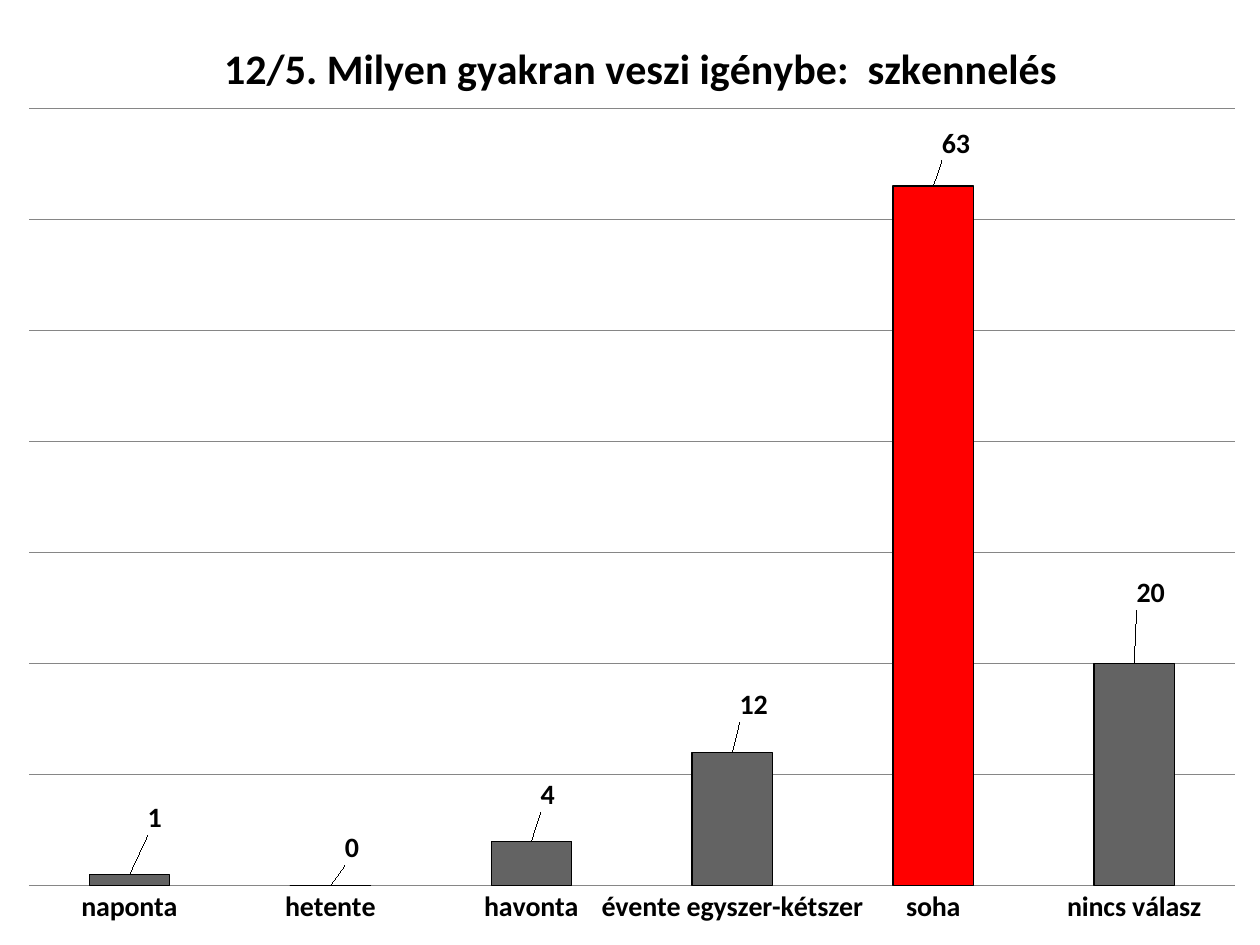
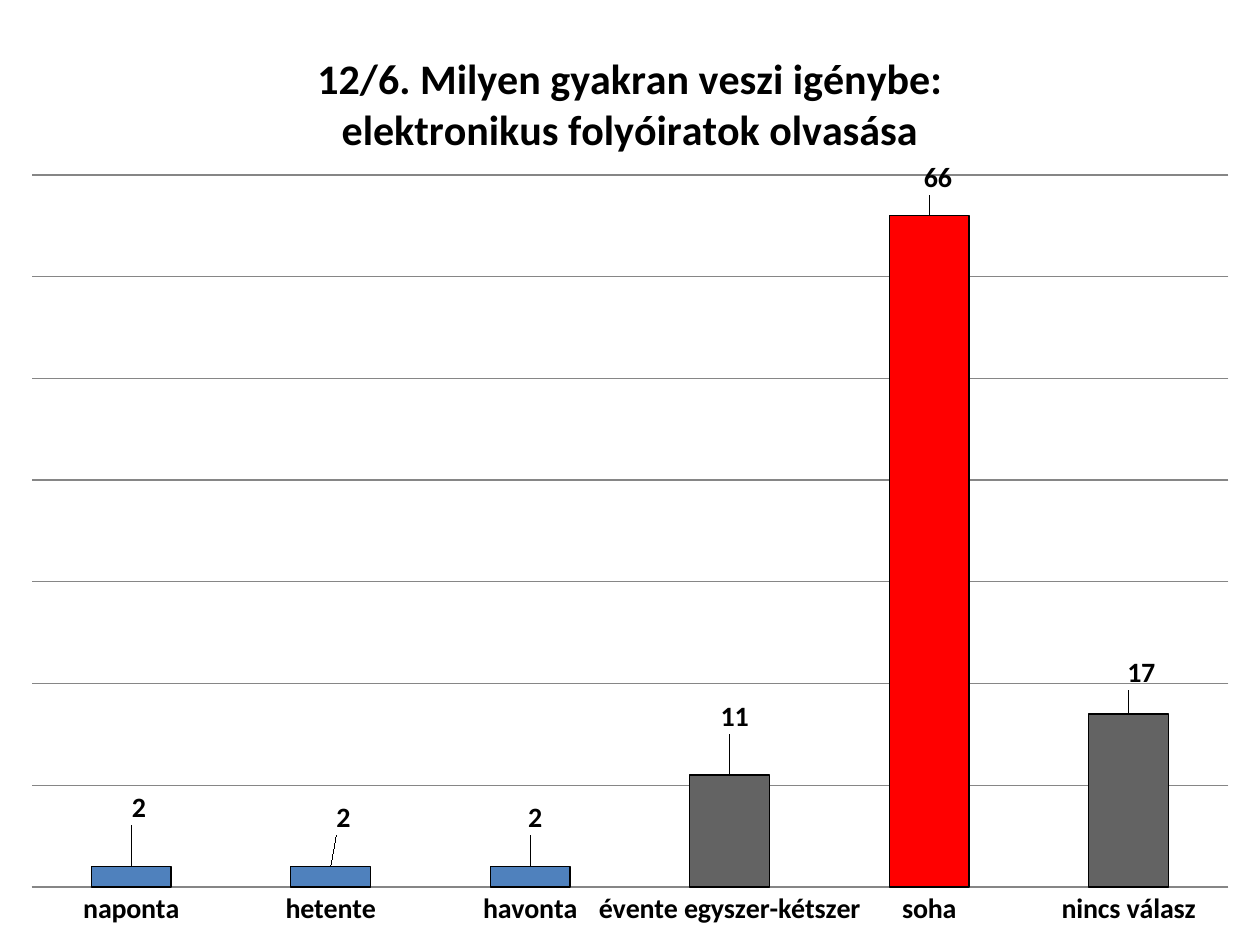
from lxml import etree
from pptx import Presentation
from pptx.chart.data import CategoryChartData
from pptx.dml.color import RGBColor
from pptx.enum.chart import XL_CHART_TYPE, XL_LABEL_POSITION, XL_TICK_LABEL_POSITION, XL_TICK_MARK
from pptx.oxml.ns import qn
from pptx.util import Inches, Pt

COLUMNS = XL_CHART_TYPE.COLUMN_CLUSTERED
ABOVE_BAR = XL_LABEL_POSITION.OUTSIDE_END
NO_TICK = XL_TICK_MARK.NONE
NO_LABELS = XL_TICK_LABEL_POSITION.NONE
FONT = "Calibri"
BLACK, GRID, GRAY, BLUE, RED = "000000", "868686", "636363", "4F81BD", "FF0000"
color = RGBColor.from_string

ANSWERS = ["naponta", "hetente", "havonta", "évente egyszer-kétszer", "soha", "nincs válasz"]
QUESTIONS = [
    {
        "title": "12/5. Milyen gyakran veszi igénybe:  szkennelés",
        "title_at": (1.72, 0.26),
        "frame": (0.03, 0, 9.97, 7.5),
        "plot": (0.23, 0.86, 9.57, 6.17),
        "counts": [1, 0, 4, 12, 63, 20],
        "fills": [GRAY, BLUE, GRAY, GRAY, RED, GRAY],
        "label_shifts": [(0.2, -0.27), (0.17, -0.12), (0.13, -0.19),
                         (0.17, -0.2), (0.18, -0.16), (0.13, -0.38)],
    },
    {
        "title": "12/6. Milyen gyakran veszi igénybe:\nelektronikus folyóiratok olvasása",
        "title_at": (2.49, 0.39),
        "frame": (0.06, 0.13, 9.88, 7.37),
        "plot": (0.25, 1.39, 9.5, 5.65),
        "counts": [2, 2, 2, 11, 66, 17],
        "fills": [BLUE, BLUE, BLUE, GRAY, RED, GRAY],
        "label_shifts": [(0.06, -0.29), (0.1, -0.21), (0.04, -0.21),
                         (0.04, -0.28), (0.07, -0.12), (0.1, -0.15)],
    },
]


def write_text(text_frame, text, size, bold=True, fill=BLACK):
    text_frame.text = text
    for paragraph in text_frame.paragraphs:
        for run in paragraph.runs:
            run.font.name = FONT
            run.font.size = Pt(size)
            run.font.bold = bold
            run.font.color.rgb = color(fill)


def set_layout(parent, index, settings):
    for previous in parent.findall(qn("c:layout")):
        parent.remove(previous)
    layout = etree.Element(qn("c:layout"))
    manual = etree.SubElement(layout, qn("c:manualLayout"))
    for name, value in settings.items():
        etree.SubElement(manual, qn(f"c:{name}")).set("val", str(value))
    parent.insert(index, layout)


presentation = Presentation()
presentation.slide_width = Inches(10)
presentation.slide_height = Inches(7.5)
blank = presentation.slide_layouts[6]

for question in QUESTIONS:
    slide = presentation.slides.add_slide(blank)
    left, top, width, height = question["frame"]
    chart_data = CategoryChartData()
    chart_data.categories = ANSWERS
    chart_data.add_series("Series 1", question["counts"])
    chart = slide.shapes.add_chart(
        COLUMNS, *[Inches(length) for length in question["frame"]], chart_data).chart
    chart.has_legend = False
    chart.font.name = FONT
    chart.font.size = Pt(10)
    chart.font.color.rgb = color(BLACK)

    write_text(chart.chart_title.text_frame, question["title"], size=24)
    chart.chart_title.include_in_layout = False
    title_left, title_top = question["title_at"]
    set_layout(chart.element.xpath("c:chart/c:title")[0], 1, {
        "xMode": "edge", "yMode": "edge",
        "x": (title_left - left) / width, "y": (title_top - top) / height})
    plot_left, plot_top, plot_width, plot_height = question["plot"]
    set_layout(chart.element.xpath("c:chart/c:plotArea")[0], 0, {
        "layoutTarget": "inner", "xMode": "edge", "yMode": "edge",
        "x": (plot_left - left) / width, "y": (plot_top - top) / height,
        "w": plot_width / width, "h": plot_height / height})

    answer_axis = chart.category_axis
    answer_axis.major_tick_mark = NO_TICK
    answer_axis.tick_labels.font.size = Pt(16)
    answer_axis.tick_labels.font.bold = True
    answer_axis.format.line.color.rgb = color(GRID)
    count_axis = chart.value_axis
    count_axis.minimum_scale = 0
    count_axis.maximum_scale = 70
    count_axis.major_unit = 10
    count_axis.tick_label_position = NO_LABELS
    count_axis.visible = False
    count_axis.major_gridlines.format.line.color.rgb = color(GRID)
    count_axis.major_gridlines.format.line.width = Pt(0.75)

    plot = chart.plots[0]
    plot.gap_width = 150
    plot.vary_by_categories = False
    series = plot.series[0]
    series.format.fill.solid()
    series.format.fill.fore_color.rgb = color(BLUE)
    for index, fill in enumerate(question["fills"]):
        point = series.points[index]
        point.format.fill.solid()
        point.format.fill.fore_color.rgb = color(fill)
        point.format.line.color.rgb = color(BLACK)
        point.format.line.width = Pt(0.75)
        point.data_label.font.size = Pt(16)
        point.data_label.font.bold = True
        point.data_label.position = ABOVE_BAR
    labels = chart.element.xpath(".//c:ser/c:dLbls/c:dLbl")
    for label, (shift_x, shift_y) in zip(labels, question["label_shifts"]):
        set_layout(label, 1, {"x": shift_x / width, "y": shift_y / height})

presentation.save("out.pptx")
